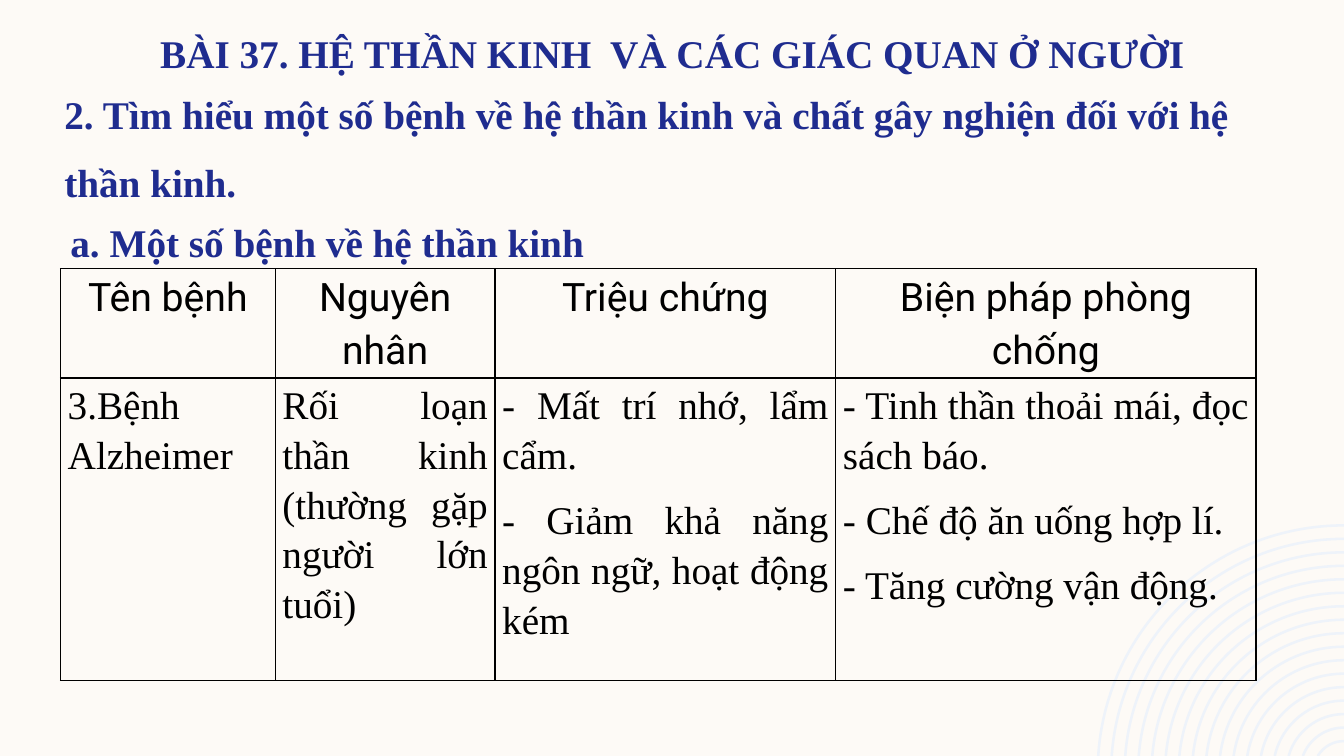
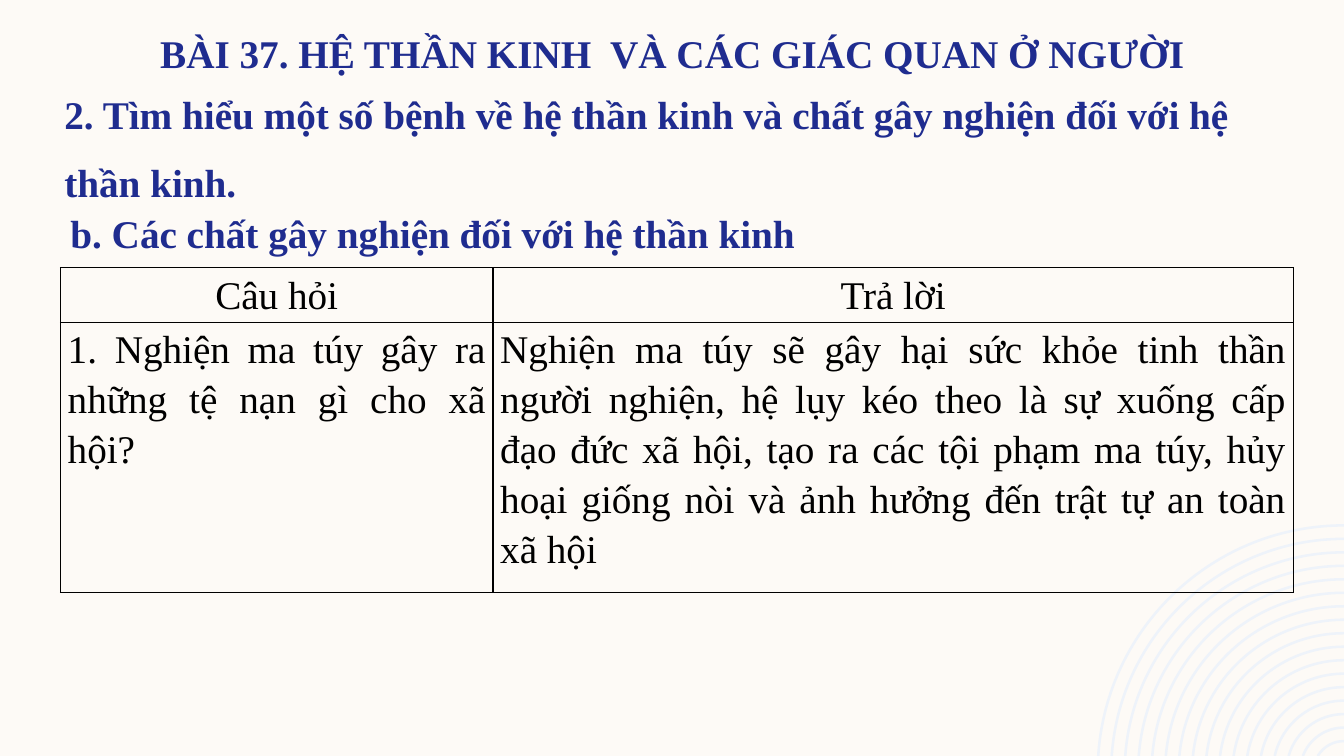
from math import asin, cos, pi, sin, tan

from lxml.etree import SubElement
from pptx import Presentation
from pptx.dml.color import RGBColor as RGB
from pptx.enum.text import MSO_AUTO_SIZE as FIT, PP_ALIGN as AL
from pptx.oxml.ns import qn
from pptx.util import Pt

COLORS = {"paper": "FDFAF6", "navy": "1F2C8F", "ink": "000000", "arc": "EEF3FA"}
SERIF, SANS = "Times New Roman", "Roboto"
W, H = 960, 540
LEFT = 43.2
SIZE = 28
TITLE = "BÀI 37. HỆ THẦN KINH  VÀ CÁC GIÁC QUAN Ở NGƯỜI"
SECTION = ("2. Tìm hiểu một số bệnh về hệ thần kinh và chất gây nghiện "
           "đối với hệ thần kinh.")


def color(name):
    return RGB.from_string(COLORS[name])


def style(tf, name, font, align, spacing, bold=False, before=0, after=0):
    for p in tf.paragraphs:
        p.alignment = align
        p.line_spacing = spacing
        p.space_before, p.space_after = Pt(before), Pt(after)
        for r in p.runs:
            r.font.name, r.font.size, r.font.bold = font, Pt(SIZE), bold
            r.font.color.rgb = color(name)


def add_text(s, text, x, y, w, h, align, spacing, top=0, **gaps):
    tf = s.shapes.add_textbox(Pt(x), Pt(y), Pt(w), Pt(h)).text_frame
    tf.word_wrap = True
    tf.margin_top = Pt(top)
    tf.text = text
    style(tf, "navy", SERIF, align, spacing, bold=True, **gaps)
    return tf


def arc_points(radius, cy):
    a = asin((cy - H) / radius)
    pull = radius * 4 / 3 * tan((pi / 2 - a) / 4)
    x, y = W - radius * cos(a), cy - radius * sin(a)
    top = cy - radius
    points = [(x, y), (x + pull * sin(a), y - pull * cos(a)),
              (W - pull, top), (W, top)]
    return [(Pt(px), Pt(py)) for px, py in points]


def bend_lines(sp):
    for path in sp._element.iter(qn("a:path")):
        lines = path.findall(qn("a:lnTo"))
        for i in range(0, len(lines), 3):
            curve = lines[i]
            curve.tag = qn("a:cubicBezTo")
            for ln in lines[i + 1:i + 3]:
                curve.append(ln[0])
                path.remove(ln)


def add_arcs(s, count=17, cy=551.2, outer=175.9, step=9.63):
    fb = None
    for i in range(count):
        first, *rest = arc_points(outer - i * step, cy)
        if fb is None:
            fb = s.shapes.build_freeform(*first)
        else:
            fb.move_to(*first)
        fb.add_line_segments(rest, close=False)
    sp = fb.convert_to_shape()
    bend_lines(sp)
    sp.shadow.inherit = False
    sp.fill.background()
    sp.line.color.rgb = color("arc")
    sp.line.width = Pt(1.8)


def add_borders(cell):
    tc_pr = cell._tc.get_or_add_tcPr()
    for i, side in enumerate(("a:lnL", "a:lnR", "a:lnT", "a:lnB")):
        ln = SubElement(tc_pr, qn(side), w=str(Pt(1)))
        fill = SubElement(ln, qn("a:solidFill"))
        SubElement(fill, qn("a:srgbClr"), val=COLORS["ink"])
        tc_pr.insert(i, ln)


def add_grid(s, y, widths, heights, rows, head_font, before):
    table = s.shapes.add_table(len(rows), len(widths), Pt(LEFT), Pt(y),
                               Pt(sum(widths)), Pt(sum(heights))).table
    table.first_row = table.horz_banding = False
    for col, w in zip(table.columns, widths):
        col.width = Pt(w)
    for i, (row, h, texts) in enumerate(zip(table.rows, heights, rows)):
        row.height = Pt(h)
        font, align = (SERIF, AL.JUSTIFY) if i else (head_font, AL.CENTER)
        for cell, text in zip(row.cells, texts):
            cell.margin_left = cell.margin_right = Pt(5.2)
            cell.margin_top = cell.margin_bottom = 0
            cell.text_frame.text = text
            style(cell.text_frame, "ink", font, align, 1.15,
                  before=before, after=3)
            cell.fill.background()
            add_borders(cell)


def add_lesson_slide(prs, topic, topic_y, topic_w, before, **grid):
    s = prs.slides.add_slide(prs.slide_layouts[6])
    add_arcs(s)
    add_text(s, TITLE, 0, 5.8, W, 46.8, AL.CENTER, Pt(48.8))
    add_text(s, SECTION, 38.9, 49, 887.8, 46.8, AL.LEFT, Pt(48.8))
    add_grid(s, before=before, **grid)
    tf = add_text(s, topic, LEFT, topic_y, topic_w, 44, AL.JUSTIFY, 1.15,
                  top=3.6, before=before, after=3)
    tf.auto_size = FIT.SHAPE_TO_FIT_TEXT


def main():
    prs = Presentation()
    prs.slide_width, prs.slide_height = Pt(W), Pt(H)
    bg = prs.slide_master.background.fill
    bg.solid()
    bg.fore_color.rgb = color("paper")

    add_lesson_slide(
        prs, "a. Một số bệnh về hệ thần kinh", 147.6, 480, before=8,
        y=192, widths=[153.4, 157, 243.4, 300.2], heights=[78, 216],
        head_font=SANS,
        rows=[
            ["Tên bệnh", "Nguyên nhân", "Triệu chứng", "Biện pháp phòng chống"],
            ["3.Bệnh Alzheimer",
             "Rối loạn thần kinh (thường gặp người lớn tuổi)",
             "- Mất trí nhớ, lẩm cẩm.\n- Giảm khả năng ngôn ngữ, hoạt động kém",
             "- Tinh thần thoải mái, đọc sách báo.\n- Chế độ ăn uống hợp lí.\n"
             "- Tăng cường vận động."],
        ])
    add_lesson_slide(
        prs, "b. Các chất gây nghiện đối với hệ thần kinh", 141.1, 597, before=27,
        y=191.3, widths=[308.9, 571.7], heights=[39, 193],
        head_font=SERIF,
        rows=[
            ["Câu hỏi", "Trả lời"],
            ["1. Nghiện ma túy gây ra những tệ nạn gì cho xã hội?",
             "Nghiện ma túy sẽ gây hại sức khỏe tinh thần người nghiện, hệ lụy "
             "kéo theo là sự xuống cấp đạo đức xã hội, tạo ra các tội phạm ma "
             "túy, hủy hoại giống nòi và ảnh hưởng đến trật tự an toàn xã hội"],
        ])
    prs.save("out.pptx")


if __name__ == "__main__":
    main()
